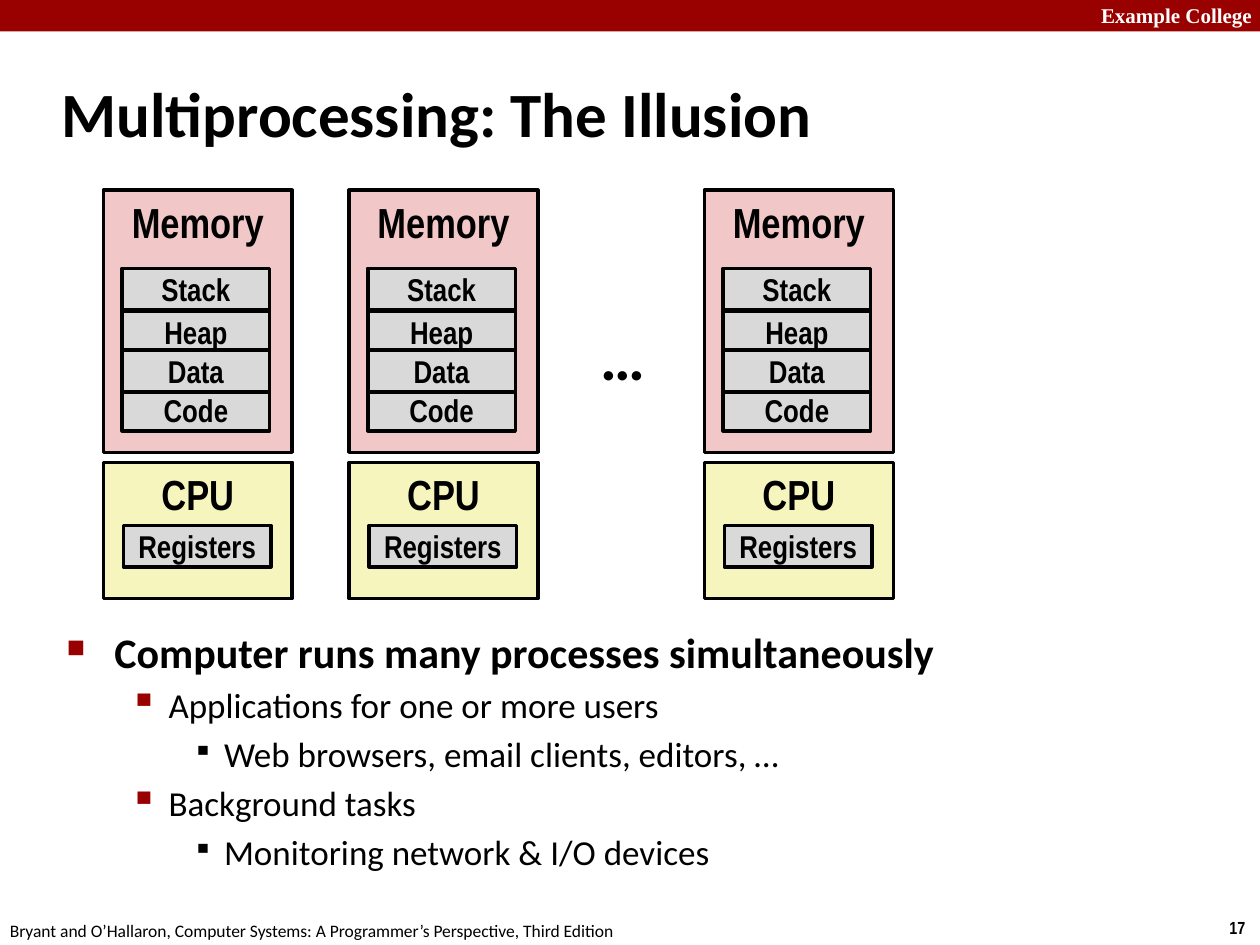
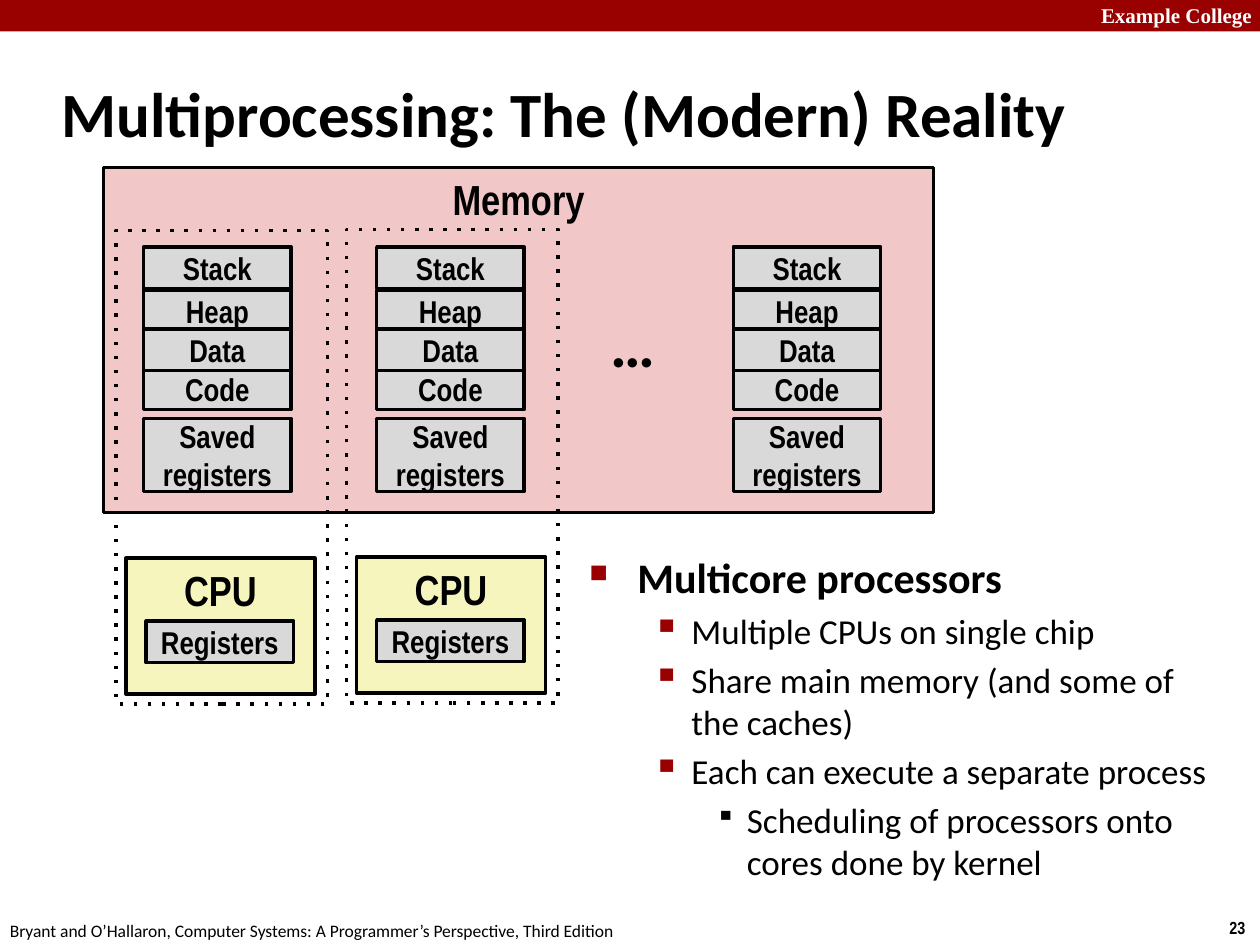
from lxml import etree
from pptx import Presentation
from pptx.dml.color import RGBColor
from pptx.enum import dml, shapes, text
from pptx.oxml import ns
from pptx.util import Inches, Pt

RED, PINK, YELLOW, GREY = "990000", "F1C7C7", "F6F5BD", "D9D9D9"
BLACK, WHITE = "000000", "FFFFFF"

SCHOOL = "Example College"
FOOTER = ("Bryant and O’Hallaron, Computer Systems: "
          "A Programmer’s Perspective, Third Edition")

# Each point is (level, text).
ILLUSION = {
    "title": "Multiprocessing: The Illusion",
    "number": "17",
    "points": [
        (0, "Computer runs many processes simultaneously"),
        (1, "Applications for one or more users"),
        (2, "Web browsers, email clients, editors, …"),
        (1, "Background tasks"),
        (2, "Monitoring network & I/O devices"),
    ],
    "points_at": (0.43, 4.92, 8.64, 2.16),
    "dots_at": (4.67, 2.47, 0.56, 0.71),
}
REALITY = {
    "title": "Multiprocessing: The (Modern) Reality",
    "number": "23",
    "points": [
        (0, "Multicore processors"),
        (1, "Multiple CPUs on single chip"),
        (1, "Share main memory (and some of the caches)"),
        (1, "Each can execute a separate process"),
        (2, "Scheduling of processors onto cores done by kernel"),
    ],
    "points_at": (4.58, 4.33, 5.17, 2.92),
    "dots_at": (4.75, 2.37, 0.56, 0.71),
}

# Memory segments in drawing order, with their drop below the stack.
SEGMENTS = [("Stack", 0), ("Heap", 0.34), ("Code", 0.96), ("Data", 0.65)]
SAVED_DROP = 1.36
CELL_W, CELL_H = 1.17, 0.33
CPU_W, CPU_H = 1.5, 1.08

MACHINE_XS = [0.82, 2.77, 5.59]
PROCESS_XS = [1.14, 2.99, 5.82]
CORES = [(0.92, 1.83), (2.75, 1.82)]

LEVELS = [
    {"size": 24, "bold": True, "left": 0.38, "hang": 0.38,
     "bullet": "■", "scale": 60, "color": RED},
    {"size": 20, "bold": False, "left": 0.81, "hang": 0.31,
     "bullet": "▪", "scale": 110, "color": RED},
    {"size": 20, "bold": False, "left": 1.25, "hang": 0.25,
     "bullet": "▪", "scale": 80, "color": BLACK},
]

LABEL = {"name": "Arial Narrow", "size": 24, "bold": True}
CELL_LABEL = {**LABEL, "size": 18}
HEADING = {"name": "Calibri", "size": 36, "bold": True}


def rgb(value):
    return RGBColor.from_string(value)


def add_run(p, words, font, color=BLACK):
    r = p.add_run()
    r.text = words
    for key, value in font.items():
        setattr(r.font, key, Pt(value) if key == "size" else value)
    r.font.color.rgb = rgb(color)


def add_text(slide, at, words, font, color=BLACK, wrap=True, middle=False):
    tf = slide.shapes.add_textbox(*map(Inches, at)).text_frame
    tf.word_wrap = wrap
    if middle:
        tf.vertical_anchor = text.MSO_ANCHOR.MIDDLE
    add_run(tf.paragraphs[0], words, font, color)


def add_box(slide, at, fill=None, line=BLACK):
    sp = slide.shapes.add_shape(shapes.MSO_SHAPE.RECTANGLE, *map(Inches, at))
    sp.shadow.inherit = False
    if fill:
        sp.fill.solid()
        sp.fill.fore_color.rgb = rgb(fill)
    else:
        sp.fill.background()
    if line:
        sp.line.color.rgb = rgb(line)
        sp.line.width = Pt(2)
    else:
        sp.line.fill.background()
    return sp


def add_labelled_box(slide, at, fill, words, font=LABEL, middle=False):
    tf = add_box(slide, at, fill).text_frame
    tf.word_wrap = True
    anchors = text.MSO_ANCHOR
    tf.vertical_anchor = anchors.MIDDLE if middle else anchors.TOP
    p = tf.paragraphs[0]
    p.alignment = text.PP_ALIGN.CENTER
    add_run(p, words, font)


def add_cell(slide, x, y, words, h=CELL_H):
    add_labelled_box(slide, (x, y, CELL_W, h), GREY, words, CELL_LABEL, True)


def add_segments(slide, x, y):
    for words, drop in SEGMENTS:
        add_cell(slide, x, y + drop, words)


def add_cpu(slide, x, y):
    add_labelled_box(slide, (x, y, CPU_W, CPU_H), YELLOW, "CPU")
    add_cell(slide, x + 0.16, y + 0.5, "Registers")


def add_dotted_frame(slide, at):
    sp = add_box(slide, at)
    sp.line.dash_style = dml.MSO_LINE.ROUND_DOT
    # The preset "dot" has wider gaps than the enum's round dot.
    sp.line._ln.find(ns.qn("a:prstDash")).set("val", "dot")


def set_bullet(p, style):
    pPr = p._p.get_or_add_pPr()
    pPr.set("marL", str(Inches(style["left"])))
    pPr.set("indent", str(-Inches(style["hang"])))
    clr = etree.SubElement(pPr, ns.qn("a:buClr"))
    etree.SubElement(clr, ns.qn("a:srgbClr"), val=style["color"])
    etree.SubElement(pPr, ns.qn("a:buSzPct"), val=str(style["scale"] * 1000))
    etree.SubElement(pPr, ns.qn("a:buChar"), char=style["bullet"])


def add_points(slide, at, points):
    tf = slide.shapes.add_textbox(*map(Inches, at)).text_frame
    tf.word_wrap = True
    for i, (level, words) in enumerate(points):
        p = tf.add_paragraph() if i else tf.paragraphs[0]
        style = LEVELS[level]
        p.level = level
        p.space_before = Pt(style["size"] * 0.2)
        set_bullet(p, style)
        add_run(p, words, {"name": "Calibri", "size": style["size"],
                           "bold": style["bold"]})


def add_slide(prs, content):
    """Add a slide with the band, footer, title, points and ellipsis."""
    slide = prs.slides.add_slide(prs.slide_layouts[6])
    add_box(slide, (0, 0, 10, 0.25), RED, line=None)
    add_text(slide, (8.64, -0.03, 1.43, 0.3), SCHOOL,
             {"name": "Times New Roman", "size": 12, "bold": True}, WHITE)
    add_text(slide, (9.66, 7.23, 0.34, 0.27), content["number"],
             {**LABEL, "size": 10}, wrap=False)
    add_text(slide, (-0.02, 7.25, 5.08, 0.27), FOOTER,
             {"name": "Calibri", "size": 10}, wrap=False)
    add_text(slide, (0.39, 0.48, 9.28, 0.83), content["title"], HEADING,
             middle=True)
    add_points(slide, content["points_at"], content["points"])
    return slide


def add_dots(slide, content):
    add_text(slide, content["dots_at"], "…", HEADING, wrap=False)


def build_illusion(prs):
    slide = add_slide(prs, ILLUSION)
    for x in MACHINE_XS:
        add_cpu(slide, x, 3.67)
        add_labelled_box(slide, (x, 1.51, CPU_W, 2.08), PINK, "Memory")
        add_segments(slide, x + 0.15, 2.13)
    add_dots(slide, ILLUSION)


def build_reality(prs):
    slide = add_slide(prs, REALITY)
    add_labelled_box(slide, (0.82, 1.33, 6.59, 2.74), PINK, "Memory")
    for x in PROCESS_XS:
        add_segments(slide, x, 1.96)
        add_cell(slide, x, 1.96 + SAVED_DROP, "Saved registers", h=0.58)
    add_dots(slide, REALITY)
    for x, y in CORES:
        add_cpu(slide, x + 0.08, y + 2.6)
        add_dotted_frame(slide, (x, y, 1.68, 3.76))


def main():
    prs = Presentation()
    prs.slide_width, prs.slide_height = Inches(10), Inches(7.5)
    build_illusion(prs)
    build_reality(prs)
    prs.save("out.pptx")


if __name__ == "__main__":
    main()
